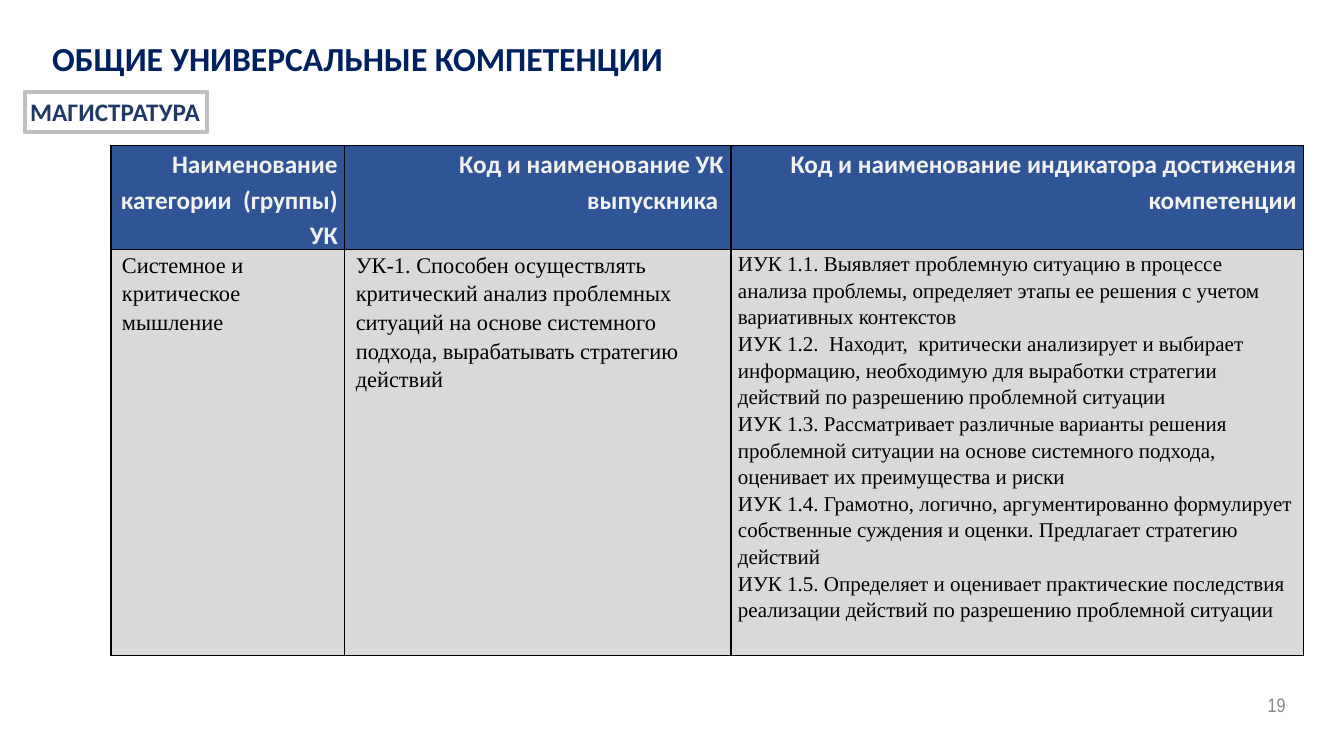
from lxml import etree
from pptx import Presentation
from pptx.dml.color import RGBColor
from pptx.enum.shapes import MSO_SHAPE
from pptx.enum.text import MSO_ANCHOR, PP_ALIGN
from pptx.oxml.ns import qn
from pptx.util import Inches, Pt

LEFT, RIGHT = PP_ALIGN.LEFT, PP_ALIGN.RIGHT
TOP, MIDDLE = MSO_ANCHOR.TOP, MSO_ANCHOR.MIDDLE
RECTANGLE = MSO_SHAPE.RECTANGLE

HEADINGS = [
    "Наименование категории  (группы)  УК",
    "Код и наименование УК выпускника ",
    "Код и наименование индикатора достижения компетенции",
]
CATEGORY = ["Системное и критическое мышление"]
COMPETENCE = [
    "УК-1. Способен осуществлять критический анализ проблемных ситуаций на основе "
    "системного подхода, вырабатывать стратегию действий",
]
INDICATORS = [
    "ИУК 1.1. Выявляет проблемную ситуацию в процессе анализа проблемы, определяет "
    "этапы ее решения с учетом вариативных контекстов",
    "ИУК 1.2.  Находит,  критически анализирует и выбирает информацию, необходимую "
    "для выработки стратегии действий по разрешению проблемной ситуации",
    "ИУК 1.3. Рассматривает различные варианты решения проблемной ситуации на основе "
    "системного подхода, оценивает их преимущества и риски",
    "ИУК 1.4. Грамотно, логично, аргументированно формулирует собственные суждения и "
    "оценки. Предлагает стратегию действий",
    "ИУК 1.5. Определяет и оценивает практические последствия реализации действий по "
    "разрешению проблемной ситуации",
]


def color(value):
    return RGBColor.from_string(value)


def write(frame, lines, *, size, font, ink, bold=False, align=LEFT, spacing=None, indent=0):
    """Fill a text frame with one paragraph per line."""
    for index, line in enumerate(lines):
        para = frame.paragraphs[0] if index == 0 else frame.add_paragraph()
        para.alignment = align
        if spacing:
            para.line_spacing = spacing
        if indent:
            para._p.get_or_add_pPr().set("marL", str(Inches(indent)))
        span = para.add_run()
        span.text = line
        span.font.size = Pt(size)
        span.font.name = font
        span.font.bold = bold
        span.font.color.rgb = color(ink)


def outline_cell(cell, ink, width):
    properties = cell._tc.get_or_add_tcPr()
    for position, side in enumerate(("a:lnL", "a:lnR", "a:lnT", "a:lnB")):
        line = etree.Element(qn(side), w=str(Pt(width)))
        fill = etree.SubElement(line, qn("a:solidFill"))
        etree.SubElement(fill, qn("a:srgbClr"), val=ink)
        properties.insert(position, line)


class SlideBuilder:
    heading_font = "Calibri"
    body_font = "Times New Roman"
    number_font = "Arial Narrow"

    def __init__(self, deck):
        self.page = deck.slides.add_slide(deck.slide_layouts[6])

    def set_frame(self, frame, margins, anchor, wrap=True):
        frame.word_wrap = wrap
        frame.vertical_anchor = anchor
        frame.margin_left = frame.margin_right = Inches(margins[0])
        frame.margin_top = frame.margin_bottom = Inches(margins[1])

    def text(self, place, content, margins=(0.1, 0.05), anchor=TOP, **style):
        box = self.page.shapes.add_textbox(*map(Inches, place))
        self.set_frame(box.text_frame, margins, anchor)
        write(box.text_frame, [content], **style)

    def label(self, place, content, fill, border, **style):
        box = self.page.shapes.add_shape(RECTANGLE, *map(Inches, place))
        box.shadow.inherit = False
        box.fill.solid()
        box.fill.fore_color.rgb = color(fill)
        box.line.color.rgb = color(border)
        box.line.width = Pt(3)
        self.set_frame(box.text_frame, (0.05, 0.05), TOP, wrap=False)
        write(box.text_frame, [content], **style)

    def table(self, place, widths, heights):
        frame = self.page.shapes.add_table(len(heights), len(widths), *map(Inches, place))
        for column, width in zip(frame.table.columns, widths):
            column.width = Inches(width)
        for row, height in zip(frame.table.rows, heights):
            row.height = Inches(height)
        return frame.table

    def cell(self, cell, lines, fill, **style):
        cell.margin_left = cell.margin_right = Inches(0.07)
        cell.margin_top = cell.margin_bottom = 0
        cell.fill.solid()
        cell.fill.fore_color.rgb = color(fill)
        outline_cell(cell, "000000", 1)
        write(cell.text_frame, lines, spacing=1.15, **style)


def main():
    deck = Presentation()
    deck.slide_width, deck.slide_height = Inches(13.33), Inches(7.5)
    slide = SlideBuilder(deck)

    # Title and page number
    slide.text((0.42, 0.33, 12, 0.5), "ОБЩИЕ УНИВЕРСАЛЬНЫЕ КОМПЕТЕНЦИИ",
               size=24, font=slide.heading_font, ink="002060", bold=True)
    slide.text((9.75, 6.83, 3, 0.32), "19", margins=(0, 0), anchor=MIDDLE,
               size=14, font=slide.number_font, ink="888888", align=RIGHT)

    # Competence table
    table = slide.table((1.1, 1.44, 11.83, 5.04), (2.32, 3.83, 5.68), (1.03, 4.01))
    for column, heading in enumerate(HEADINGS):
        slide.cell(table.cell(0, column), [heading], "2F5597", size=18,
                   font=slide.heading_font, ink="F2F2F2", bold=True, align=RIGHT)
    body = [(CATEGORY, 16, 0.04), (COMPETENCE, 16, 0.04), (INDICATORS, 15, 0)]
    for column, (lines, size, indent) in enumerate(body):
        slide.cell(table.cell(1, column), lines, "D9D9D9", size=size,
                   font=slide.body_font, ink="000000", indent=indent)

    # Degree level label
    slide.label((0.25, 0.91, 1.8, 0.4), "МАГИСТРАТУРА", "FFFFFF", "BFBFBF",
                size=18, font=slide.heading_font, ink="203864", bold=True)

    deck.save("out.pptx")


if __name__ == "__main__":
    main()
